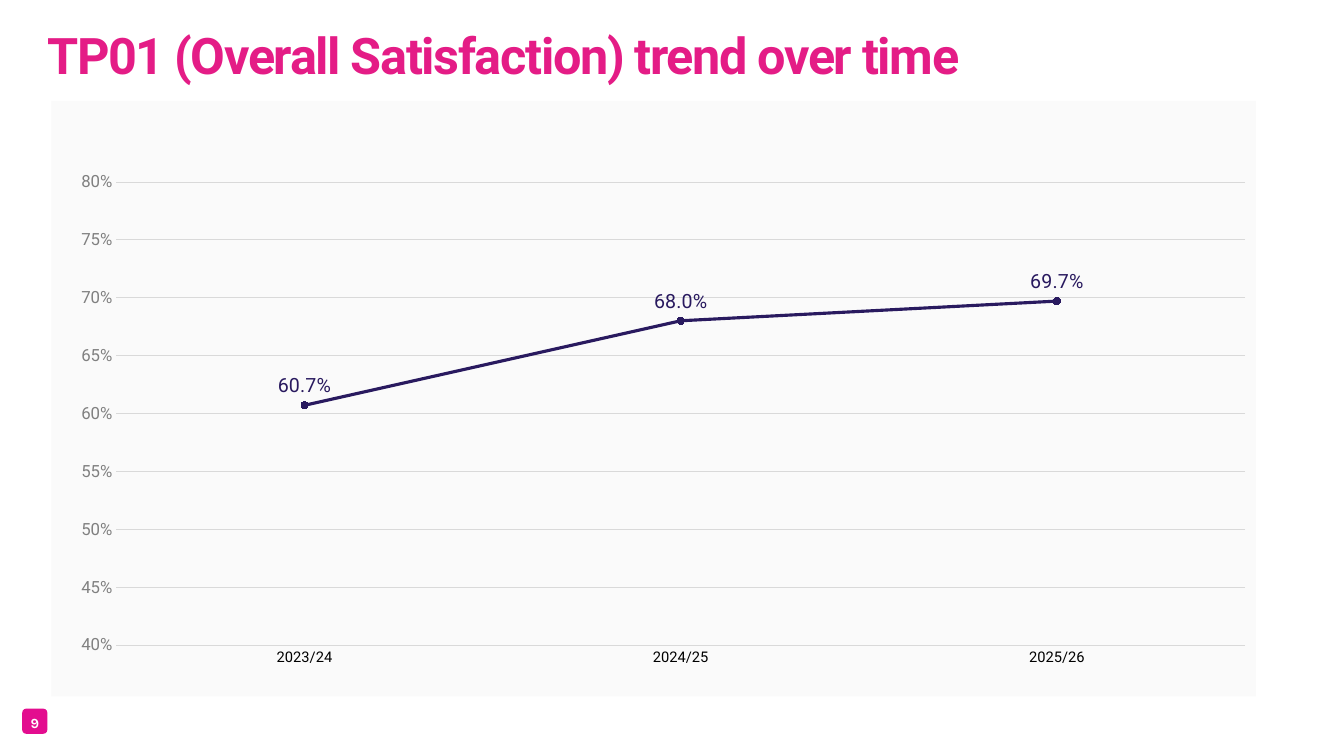
from dataclasses import dataclass

import lxml.etree
import pptx
import pptx.chart.chart
import pptx.chart.data
import pptx.dml.color
import pptx.enum.chart
import pptx.enum.shapes
import pptx.enum.text
import pptx.oxml
import pptx.oxml.ns
import pptx.shapes.shapetree
import pptx.util

Pt = pptx.util.Pt
RGB = pptx.dml.color.RGBColor


@dataclass(frozen=True)
class Theme:
    pink: RGB = RGB(0xE4, 0x1C, 0x86)
    badge: RGB = RGB(0xE3, 0x0D, 0x8F)
    white: RGB = RGB(0xFF, 0xFF, 0xFF)
    navy: RGB = RGB(0x29, 0x1A, 0x5F)
    black: RGB = RGB(0, 0, 0)
    grey: RGB = RGB(0x80, 0x80, 0x80)
    grid: RGB = RGB(0xD9, 0xD9, 0xD9)
    panel: RGB = RGB(0xFA, 0xFA, 0xFA)
    font: str = "Roboto"
    badge_font: str = "Karla"
    title_size: float = 36
    label_size: float = 14
    value_size: float = 12
    category_size: float = 10.5
    small_size: float = 10


THEME = Theme()


@dataclass(frozen=True)
class Box:
    left: float
    top: float
    width: float
    height: float

    def place(self) -> tuple[int, int, int, int]:
        return Pt(self.left), Pt(self.top), Pt(self.width), Pt(self.height)


@dataclass(frozen=True)
class Label:
    text: str
    box: Box
    font: str
    size: float
    color: RGB
    line: float
    align: pptx.enum.text.PP_ALIGN
    anchor: pptx.enum.text.MSO_ANCHOR
    tracking: int = 0


TITLE = Label("TP01 (Overall Satisfaction) trend over time", Box(33.84, 4.32, 793.44, 56.16),
              THEME.font, THEME.title_size, THEME.pink, 60,
              pptx.enum.text.PP_ALIGN.LEFT, pptx.enum.text.MSO_ANCHOR.BOTTOM, -100)
PAGE = Label("9", Box(15.84, 510.48, 18, 9.36),
             THEME.badge_font, THEME.small_size, THEME.white, 12,
             pptx.enum.text.PP_ALIGN.CENTER, pptx.enum.text.MSO_ANCHOR.TOP)
BADGE = Box(15.84, 506.16, 18, 18)
CHART = Box(36.72, 72, 860.4, 425.52)
PLOT = {"x": 0.054, "y": 0.136, "w": 0.937, "h": 0.778}
SATISFACTION = {"2023/24": 0.607, "2024/25": 0.68, "2025/26": 0.697}


def style_font(font: pptx.text.text.Font, size: float, color: RGB, name: str = THEME.font) -> None:
    font.size = Pt(size)
    font.name = name
    font.color.rgb = color


def add_label(shapes: pptx.shapes.shapetree.SlideShapes, label: Label) -> None:
    tf = shapes.add_textbox(*label.box.place()).text_frame
    tf.word_wrap = True
    tf.margin_left = tf.margin_top = tf.margin_right = tf.margin_bottom = 0
    tf.vertical_anchor = label.anchor
    p = tf.paragraphs[0]
    p.alignment = label.align
    p.line_spacing = Pt(label.line)
    style_font(p.font, label.size, label.color, label.font)
    p.font.bold = True
    r = p.add_run()
    r.text = label.text
    if label.tracking:
        r.font._element.set("spc", str(label.tracking))


def add_badge(shapes: pptx.shapes.shapetree.SlideShapes) -> None:
    group = shapes.add_group_shape()
    s = group.shapes.add_shape(pptx.enum.shapes.MSO_SHAPE.ROUNDED_RECTANGLE, *BADGE.place())
    s.shadow.inherit = False
    s.fill.solid()
    s.fill.fore_color.rgb = THEME.badge
    s.line.fill.background()
    add_label(group.shapes, PAGE)


def set_frame(chart: pptx.chart.chart.Chart) -> None:
    namespaces = pptx.oxml.ns.nsdecls("c", "a")
    edges = "".join(f'<c:{key}Mode val="edge"/>' for key in ("x", "y"))
    extent = "".join(f'<c:{key} val="{value}"/>' for key, value in PLOT.items())
    layout = pptx.oxml.parse_xml(
        f'<c:layout {namespaces}><c:manualLayout><c:layoutTarget val="inner"/>'
        f'{edges}{extent}</c:manualLayout></c:layout>')
    plot_area = chart._chartSpace.chart.plotArea
    for old in plot_area.findall(pptx.oxml.ns.qn("c:layout")):
        plot_area.remove(old)
    plot_area.insert(0, layout)
    panel = pptx.oxml.parse_xml(
        f'<c:spPr {namespaces}><a:solidFill><a:srgbClr val="{THEME.panel}"/></a:solidFill>'
        '<a:ln><a:noFill/></a:ln></c:spPr>')
    chart._chartSpace.chart.addnext(panel)


def add_trend(shapes: pptx.shapes.shapetree.SlideShapes) -> None:
    data = pptx.chart.data.CategoryChartData()
    data.categories = list(SATISFACTION)
    data.add_series("Series 1", list(SATISFACTION.values()))
    chart = shapes.add_chart(pptx.enum.chart.XL_CHART_TYPE.LINE_MARKERS, *CHART.place(), data).chart
    chart.has_legend = False
    chart.has_title = False
    style_font(chart.font, THEME.small_size, THEME.navy)
    set_frame(chart)

    axes = ((chart.category_axis, THEME.category_size, THEME.black),
            (chart.value_axis, THEME.value_size, THEME.grey))
    for axis, size, color in axes:
        axis.major_tick_mark = axis.minor_tick_mark = pptx.enum.chart.XL_TICK_MARK.NONE
        axis.format.line.fill.background()
        style_font(axis.tick_labels.font, size, color)
    scale = chart.value_axis
    scale.minimum_scale, scale.maximum_scale, scale.major_unit = 0.4, 0.8, 0.05
    scale.tick_labels.number_format = "0%"
    scale.tick_labels.number_format_is_linked = False
    scale.has_major_gridlines = True
    scale.major_gridlines.format.line.color.rgb = THEME.grid
    scale.major_gridlines.format.line.width = Pt(0.25)

    plot = chart.plots[0]
    plot.vary_by_categories = False
    series = plot.series[0]
    series.smooth = False
    series.format.line.color.rgb = THEME.navy
    series.format.line.width = Pt(2.25)
    marker = series.marker
    marker.style = pptx.enum.chart.XL_MARKER_STYLE.CIRCLE
    marker.size = 5
    marker.format.fill.solid()
    marker.format.fill.fore_color.rgb = THEME.navy
    marker.format.line.color.rgb = THEME.navy
    labels = series.data_labels
    labels.show_value = True
    labels.position = pptx.enum.chart.XL_LABEL_POSITION.ABOVE
    labels.number_format = "0.0%"
    labels.number_format_is_linked = False
    style_font(labels.font, THEME.label_size, THEME.navy)


def main() -> None:
    prs = pptx.Presentation()
    prs.slide_width, prs.slide_height = Pt(960), Pt(540)
    slide = prs.slides.add_slide(prs.slide_layouts[6])
    add_badge(slide.shapes)
    add_label(slide.shapes, TITLE)
    add_trend(slide.shapes)
    prs.save("out.pptx")


if __name__ == "__main__":
    main()
